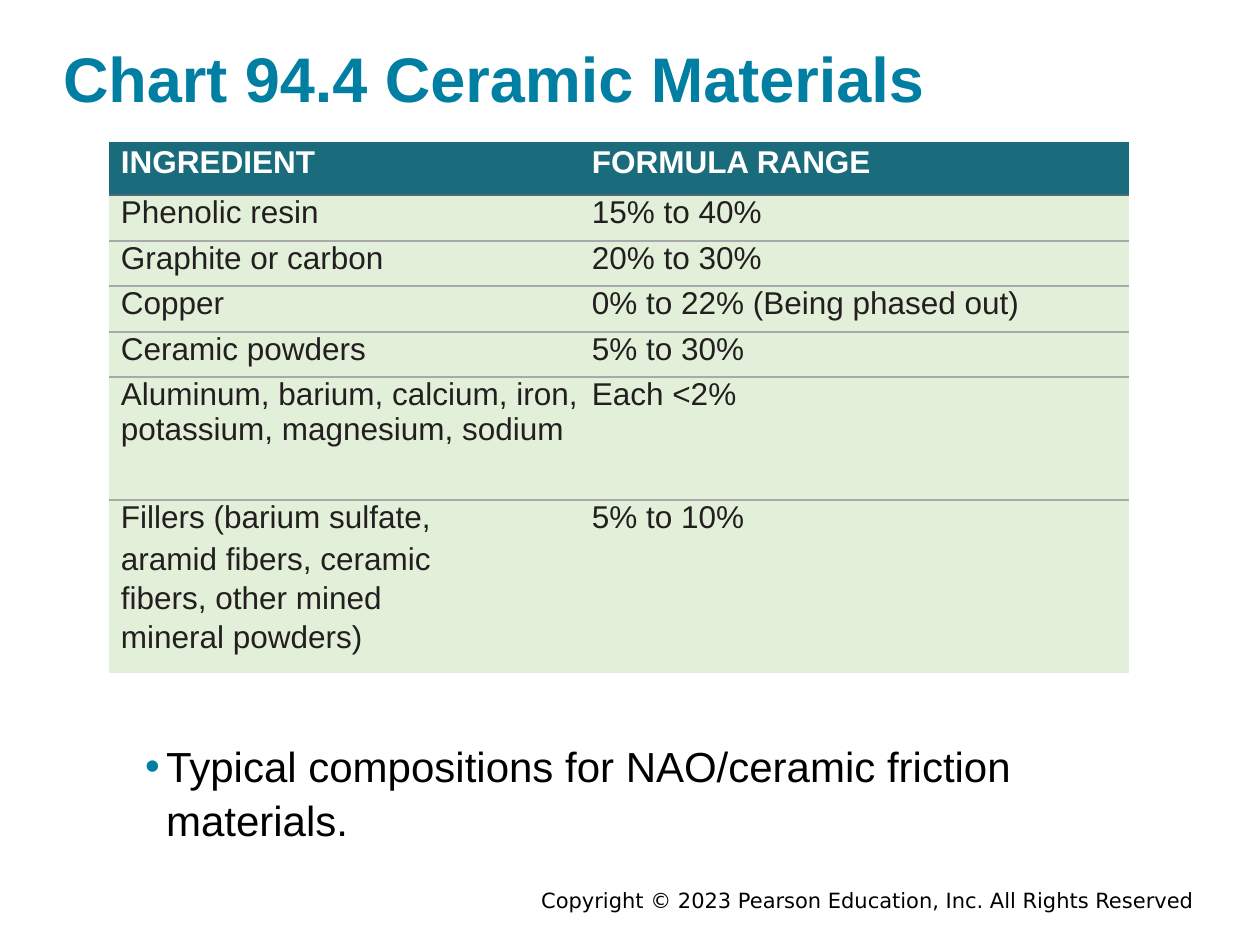
import dataclasses

import lxml.etree
import pptx
import pptx.dml.color
import pptx.enum.text
import pptx.oxml.ns
import pptx.util

PX_PER_INCH = 126
ROWS = [
    ("INGREDIENT", "FORMULA RANGE", 53),
    ("Phenolic resin", "15% to 40%", 46),
    ("Graphite or carbon", "20% to 30%", 45),
    ("Copper", "0% to 22% (Being phased out)", 46),
    ("Ceramic powders", "5% to 30%", 45),
    ("Aluminum, barium, calcium, iron, potassium, magnesium, sodium", "Each <2%", 123),
    ("Fillers (barium sulfate,", "5% to 10%", 42),
    ("aramid fibers, ceramic", "", 39),
    ("fibers, other mined", "", 39),
    ("mineral powders)", "", 53),
]
FILLER_ROW = 6


@dataclasses.dataclass(frozen=True)
class Theme:
    """Hold the colours, fonts and type sizes of the slide."""

    font: str = "Arial"
    footer_font: str = "DejaVu Sans"
    accent: str = "007FA3"
    black: str = "000000"
    white: str = "FFFFFF"
    ink: str = "231F20"
    header_fill: str = "1A6C7C"
    row_fill: str = "E2EFD9"
    header_rule: str = "4F6B79"
    row_rule: str = "A7A9AC"
    title_size: int = 36
    body_size: int = 24
    table_size: int = 18
    footer_size: int = 12


THEME = Theme()


def px(count):
    """Turn pixels into EMU."""
    return pptx.util.Emu(round(count * 914400 / PX_PER_INCH))


def rgb(value):
    """Return the colour for a hex value."""
    return pptx.dml.color.RGBColor.from_string(value)


def add_element(parent, tag, **attributes):
    """Append a DrawingML element to its parent."""
    return lxml.etree.SubElement(parent, pptx.oxml.ns.qn(tag), attributes)


def style(para, size, color, bold=False, name=THEME.font):
    """Set the font of a paragraph."""
    para.font.name = name
    para.font.size = pptx.util.Pt(size)
    para.font.bold = bold
    para.font.color.rgb = rgb(color)


def place(shape, box):
    """Move a shape to a box of left, top, width and height."""
    shape.left, shape.top, shape.width, shape.height = map(px, box)


def fill_frame(frame, text, anchor, side=0):
    """Write text into a wrapping frame and return its paragraph."""
    frame.word_wrap = True
    frame.vertical_anchor = anchor
    frame.margin_left = frame.margin_right = px(side)
    frame.margin_top = frame.margin_bottom = px(6)
    para = frame.paragraphs[0]
    para.text = text
    return para


def add_title(page, box):
    """Place and format the slide title."""
    title = page.shapes.title
    place(title, box)
    para = fill_frame(title.text_frame, "Chart 94.4 Ceramic Materials",
                      pptx.enum.text.MSO_ANCHOR.BOTTOM)
    para.alignment = pptx.enum.text.PP_ALIGN.LEFT
    style(para, THEME.title_size, THEME.accent, bold=True)


def set_rule(cell, side, color=None):
    """Draw one side of a cell, or clear it when no colour is given."""
    line = add_element(cell._tc.get_or_add_tcPr(), f"a:ln{side}", w="12700")
    if color:
        add_element(add_element(line, "a:solidFill"), "a:srgbClr", val=color)
    else:
        add_element(line, "a:noFill")


def rule_below(row):
    """Return the colour of the rule under a row, if it has one."""
    if row == 0:
        return THEME.header_rule
    return THEME.row_rule if 0 < row < FILLER_ROW else None


def format_cell(cell, text, row):
    """Write one table cell with its rules and fill."""
    header = row == 0
    for side, color in (("L", None), ("R", None),
                        ("T", rule_below(row - 1)), ("B", rule_below(row))):
        set_rule(cell, side, color)
    cell.fill.solid()
    cell.fill.fore_color.rgb = rgb(THEME.header_fill if header else THEME.row_fill)
    cell.margin_left = px(12)
    cell.margin_top = cell.margin_right = cell.margin_bottom = 0
    para = cell.text_frame.paragraphs[0]
    para.text = text
    if header:
        para.line_spacing = 1.07
    style(para, THEME.table_size, THEME.white if header else THEME.ink, bold=header)


def add_ingredients(page, box):
    """Build the table of ingredients and formula ranges."""
    table = page.shapes.add_table(len(ROWS), 2, *map(px, box)).table
    table.horz_banding = False
    first_width = 471
    table.columns[0].width = px(first_width)
    table.columns[1].width = px(box[2] - first_width)
    for row, (ingredient, formula, height) in enumerate(ROWS):
        table.rows[row].height = px(height)
        for column, text in enumerate((ingredient, formula)):
            format_cell(table.cell(row, column), text, row)


def add_summary(page, box):
    """Add the bulleted summary."""
    frame = page.shapes.add_textbox(*map(px, box)).text_frame
    para = fill_frame(frame, "Typical compositions for NAO/ceramic friction materials.",
                      pptx.enum.text.MSO_ANCHOR.TOP)
    para.line_spacing = 1.06
    properties = para._p.get_or_add_pPr()
    properties.set("marL", str(px(35)))
    properties.set("indent", str(-px(21)))
    add_element(add_element(properties, "a:buClr"), "a:srgbClr", val=THEME.accent)
    add_element(properties, "a:buFont", typeface=THEME.font)
    add_element(properties, "a:buChar", char="•")
    style(para, THEME.body_size, THEME.black)


def add_footer(page, box):
    """Add the copyright line."""
    frame = page.shapes.add_textbox(*map(px, box)).text_frame
    para = fill_frame(frame, "Copyright © 2023 Pearson Education, Inc. All Rights Reserved",
                      pptx.enum.text.MSO_ANCHOR.MIDDLE, side=13)
    para.alignment = pptx.enum.text.PP_ALIGN.RIGHT
    style(para, THEME.footer_size, THEME.black, name=THEME.footer_font)


def main():
    """Build and save the deck."""
    deck = pptx.Presentation()
    deck.slide_width, deck.slide_height = px(1260), px(945)
    page = deck.slides.add_slide(deck.slide_layouts.get_by_name("Title Only"))
    add_footer(page, (220, 886, 987, 28))
    add_title(page, (63, 32, 1134, 89))
    add_ingredients(page, (109, 142, 1020, sum(height for *_, height in ROWS)))
    add_summary(page, (131, 732, 963, 115))
    deck.save("out.pptx")


if __name__ == "__main__":
    main()
